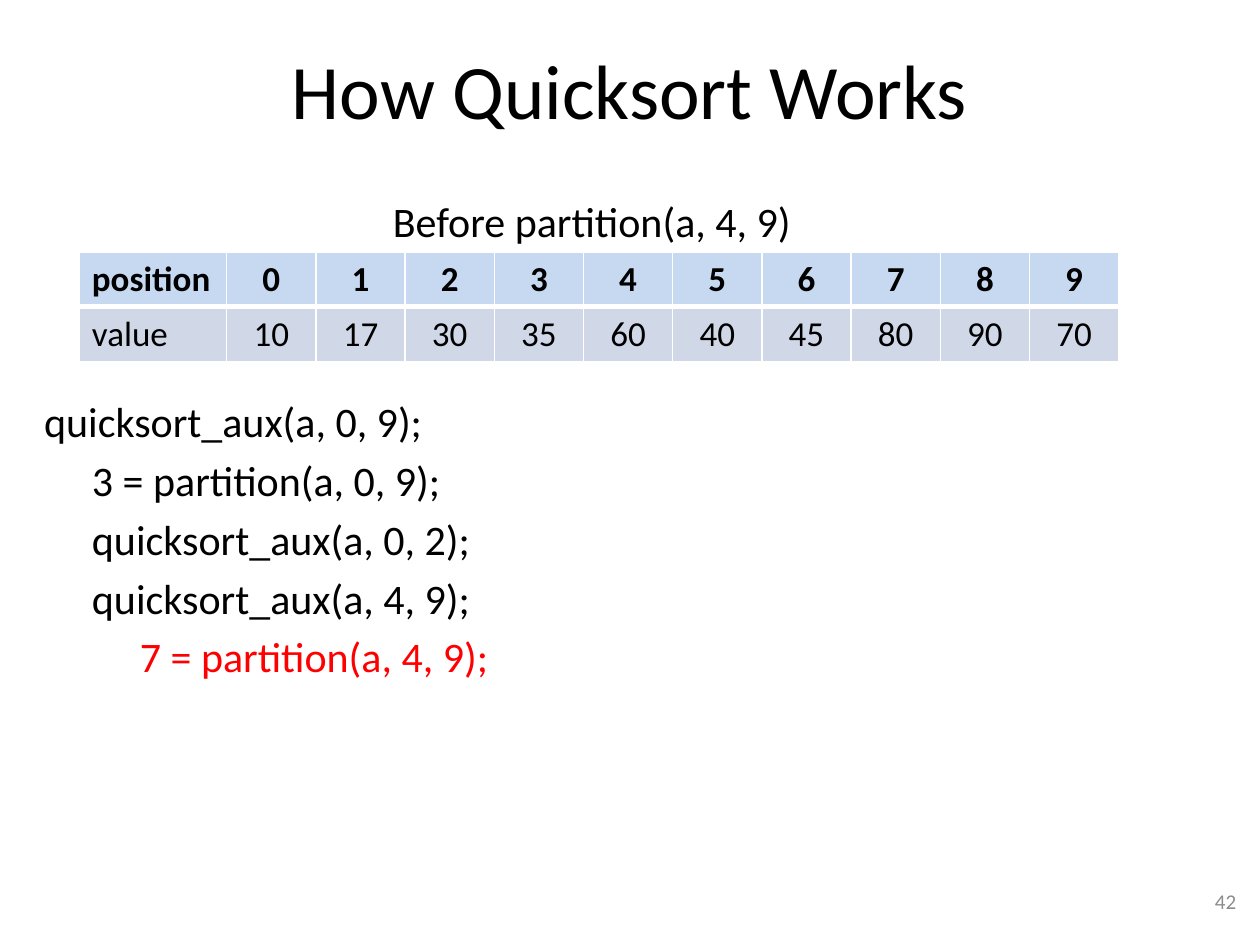
import pptx
import pptx.dml.color
import pptx.enum.text
import pptx.oxml
import pptx.oxml.ns
import pptx.util
from pptx.util import Inches

COLORS = {
    "text": "000000",
    "active": "FF0000",
    "muted": "8C8C8C",
    "header": "C6D9F1",
    "row": "D0D8E8",
    "border": "FFFFFF",
}
ALIGN = pptx.enum.text.PP_ALIGN
ANCHOR = pptx.enum.text.MSO_ANCHOR
CALL_STEP = 0.38


class QuicksortSlide:
    """Holds the text style and the slide being built."""

    def __init__(self, deck):
        self.font_name = "Calibri"
        self.slide = deck.slides.add_slide(deck.slide_layouts[1])

    def style(self, paragraph, size, color="text", align=ALIGN.LEFT, bold=False):
        paragraph.alignment = align
        font = paragraph.font
        font.name = self.font_name
        font.size = pptx.util.Pt(size)
        font.bold = bold
        font.color.rgb = pptx.dml.color.RGBColor.from_string(COLORS[color])

    def place(self, shape, left, top, width, height):
        shape.left, shape.top = Inches(left), Inches(top)
        shape.width, shape.height = Inches(width), Inches(height)

    def title(self, text, box):
        heading = self.slide.shapes.title
        self.place(heading, *box)
        heading.text_frame.text = text
        heading.text_frame.vertical_anchor = ANCHOR.MIDDLE
        self.style(heading.text_frame.paragraphs[0], 44, align=ALIGN.CENTER)

    def call_trace(self, calls, box):
        body = self.slide.placeholders[1]
        self.place(body, *box)
        frame = body.text_frame
        frame.auto_size = pptx.enum.text.MSO_AUTO_SIZE.NONE
        frame.text = "\n".join(text for depth, text, color in calls)
        for paragraph, (depth, text, color) in zip(frame.paragraphs, calls):
            self.style(paragraph, 24, color)
            properties = paragraph._p.get_or_add_pPr()
            properties.set("marL", str(Inches(depth * CALL_STEP)))
            properties.set("indent", "0")
            bullet = pptx.oxml.parse_xml(f"<a:buNone {pptx.oxml.ns.nsdecls('a')}/>")
            properties.insert_element_before(bullet, "a:tabLst", "a:defRPr", "a:extLst")

    def label(self, text, box, size, color="text", align=ALIGN.LEFT, anchor=ANCHOR.TOP, wrap=True):
        frame = self.slide.shapes.add_textbox(*map(Inches, box)).text_frame
        frame.word_wrap = wrap
        frame.vertical_anchor = anchor
        frame.text = text
        self.style(frame.paragraphs[0], size, color, align)

    def borders(self, cell, top, bottom):
        properties = cell._tc.get_or_add_tcPr()
        widths = {"lnL": 1, "lnR": 1, "lnT": top, "lnB": bottom}
        for index, (edge, width) in enumerate(widths.items()):
            line = pptx.oxml.parse_xml(
                f'<a:{edge} {pptx.oxml.ns.nsdecls("a")} w="{pptx.util.Pt(width)}"><a:solidFill>'
                f'<a:srgbClr val="{COLORS["border"]}"/></a:solidFill></a:{edge}>'
            )
            properties.insert(index, line)

    def array_table(self, rows, box, label_width):
        frame = self.slide.shapes.add_table(len(rows), len(rows[0]), *map(Inches, box))
        table = frame.table
        value_width = (box[2] - label_width) / (len(rows[0]) - 1)
        for index, column in enumerate(table.columns):
            column.width = Inches(value_width if index else label_width)
        for row_index, row in enumerate(rows):
            is_header = row_index == 0
            for column_index, entry in enumerate(row):
                cell = table.cell(row_index, column_index)
                cell.text = str(entry)
                align = ALIGN.CENTER if column_index else ALIGN.LEFT
                self.style(cell.text_frame.paragraphs[0], 20, align=align, bold=is_header)
                cell.fill.solid()
                fill = COLORS["header" if is_header else "row"]
                cell.fill.fore_color.rgb = pptx.dml.color.RGBColor.from_string(fill)
                self.borders(cell, *((1, 3) if is_header else (3, 1)))


def main():
    deck = pptx.Presentation()
    deck.slide_width, deck.slide_height = Inches(10), Inches(7.5)
    page = QuicksortSlide(deck)
    page.title("How Quicksort Works", (0.5, 0.08, 9, 1.25))
    calls = [
        (0, "quicksort_aux(a, 0, 9);", "text"),
        (1, "3 = partition(a, 0, 9);", "text"),
        (1, "quicksort_aux(a, 0, 2);", "text"),
        (1, "quicksort_aux(a, 4, 9);", "text"),
        (2, "7 = partition(a, 4, 9);", "active"),
    ]
    page.call_trace(calls, (0.25, 3.09, 9, 3.91))
    page.label("42", (7.58, 6.95, 2.33, 0.4), 12, "muted", ALIGN.RIGHT, ANCHOR.MIDDLE)
    values = [10, 17, 30, 35, 60, 40, 45, 80, 90, 70]
    rows = [["position", *range(len(values))], ["value", *values]]
    page.array_table(rows, (0.63, 2, 8.25, 0.87), 1.17)
    page.label("Before partition(a, 4, 9)", (3.02, 1.5, 3.39, 0.5), 24, wrap=False)
    deck.save("out.pptx")


if __name__ == "__main__":
    main()
